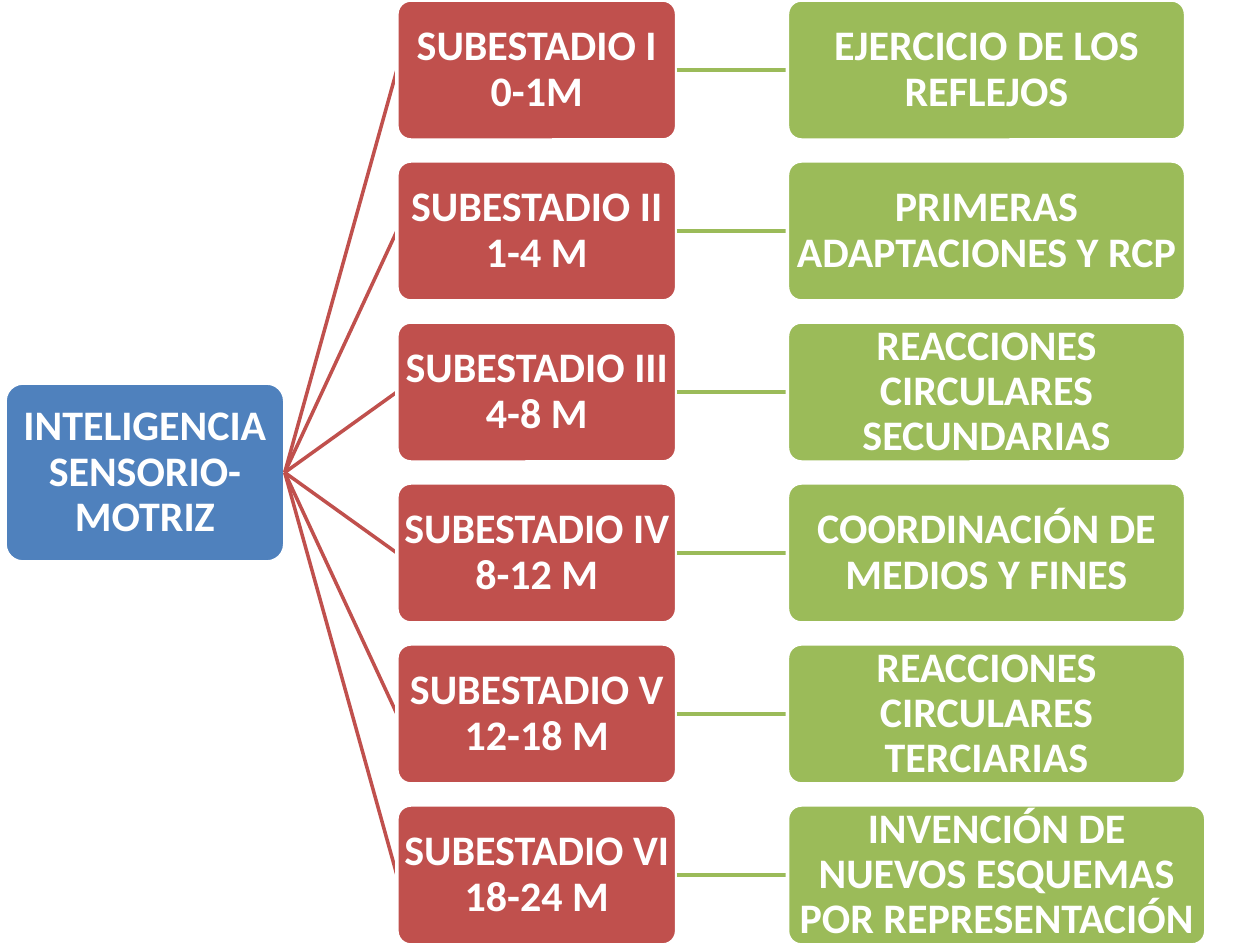
from lxml.etree import SubElement
from pptx import Presentation
from pptx.dml.color import RGBColor
from pptx.enum.shapes import MSO_CONNECTOR, MSO_SHAPE
from pptx.enum.text import MSO_ANCHOR, PP_ALIGN
from pptx.oxml.ns import qn
from pptx.util import Inches, Pt

COLORS = {"root": "4F81BD", "stage": "C0504D", "detail": "9BBB59", "white": "FFFFFF"}
SLIDE_WIDTH, SLIDE_HEIGHT = 10, 7.5
ROOT_LEFT, STAGE_LEFT, DETAIL_LEFT = 0.04, 3.15, 6.25
STAGE_WIDTH, DETAIL_WIDTH, LAST_DETAIL_WIDTH = 2.22, 3.16, 3.32
ROOT_HEIGHT = 1.42
ROW_FILL = 0.87
SUBSTAGES = [
    ("SUBESTADIO I 0-1M", "EJERCICIO DE LOS REFLEJOS"),
    ("SUBESTADIO II 1-4 M", "PRIMERAS ADAPTACIONES Y RCP"),
    ("SUBESTADIO III 4-8 M", "REACCIONES CIRCULARES SECUNDARIAS"),
    ("SUBESTADIO IV 8-12 M", "COORDINACIÓN DE MEDIOS Y FINES"),
    ("SUBESTADIO V 12-18 M", "REACCIONES CIRCULARES TERCIARIAS"),
    ("SUBESTADIO VI 18-24 M", "INVENCIÓN DE NUEVOS ESQUEMAS POR REPRESENTACIÓN"),
]


def add_node(slide, text, level, left, middle, width, height):
    """Add a rounded box centred vertically on middle."""
    node = slide.shapes.add_shape(
        MSO_SHAPE.ROUNDED_RECTANGLE,
        Inches(left), Inches(middle - height / 2), Inches(width), Inches(height))
    node.adjustments[0] = 0.1
    node.shadow.inherit = False
    node.fill.solid()
    node.fill.fore_color.rgb = RGBColor.from_string(COLORS[level])
    node.line.color.rgb = RGBColor.from_string(COLORS["white"])
    node.line.width = Pt(2)
    frame = node.text_frame
    frame.word_wrap = True
    frame.vertical_anchor = MSO_ANCHOR.MIDDLE
    frame.margin_left = frame.margin_right = Inches(0.02)
    frame.margin_top = frame.margin_bottom = Inches(0.02)
    label = frame.paragraphs[0]
    label.text = text
    label.alignment = PP_ALIGN.CENTER
    label.line_spacing = 0.9
    label.font.name = "Calibri"
    label.font.size = Pt(24)
    label.font.bold = True
    label.font.color.rgb = RGBColor.from_string(COLORS["white"])
    return node


def add_branch(slide, parent, child, level):
    """Join the parent's right side to the child's left side, under the child."""
    branch = slide.shapes.add_connector(MSO_CONNECTOR.STRAIGHT, 0, 0, 0, 0)
    branch.begin_connect(parent, 3)
    branch.end_connect(child, 1)
    branch.line.color.rgb = RGBColor.from_string(COLORS[level])
    branch.line.width = Pt(2)
    SubElement(branch.element.spPr, qn("a:effectLst"))
    child.element.addprevious(branch.element)


def add_substage(slide, root, stage_text, detail_text, middle, height, detail_width):
    """Add one row: a substage box and its description, joined to the root."""
    stage = add_node(slide, stage_text, "stage", STAGE_LEFT, middle, STAGE_WIDTH, height)
    add_branch(slide, root, stage, "stage")
    detail = add_node(slide, detail_text, "detail", DETAIL_LEFT, middle, detail_width, height)
    add_branch(slide, stage, detail, "detail")


def add_tree(slide, top, height):
    """Add the root and its evenly spaced substages within the given height."""
    root = add_node(slide, "INTELIGENCIA SENSORIO-MOTRIZ", "root",
                    ROOT_LEFT, top + height / 2, STAGE_WIDTH, ROOT_HEIGHT)
    pitch = height / (len(SUBSTAGES) - 1 + ROW_FILL)
    node_height = pitch * ROW_FILL
    for row, (stage_text, detail_text) in enumerate(SUBSTAGES):
        is_last = row == len(SUBSTAGES) - 1
        add_substage(slide, root, stage_text, detail_text,
                     top + row * pitch + node_height / 2, node_height,
                     LAST_DETAIL_WIDTH if is_last else DETAIL_WIDTH)


def main():
    """Build and save the slide."""
    presentation = Presentation()
    presentation.slide_width = Inches(SLIDE_WIDTH)
    presentation.slide_height = Inches(SLIDE_HEIGHT)
    slide = presentation.slides.add_slide(presentation.slide_layouts[6])
    add_tree(slide, 0, SLIDE_HEIGHT)
    presentation.save("out.pptx")


if __name__ == "__main__":
    main()
